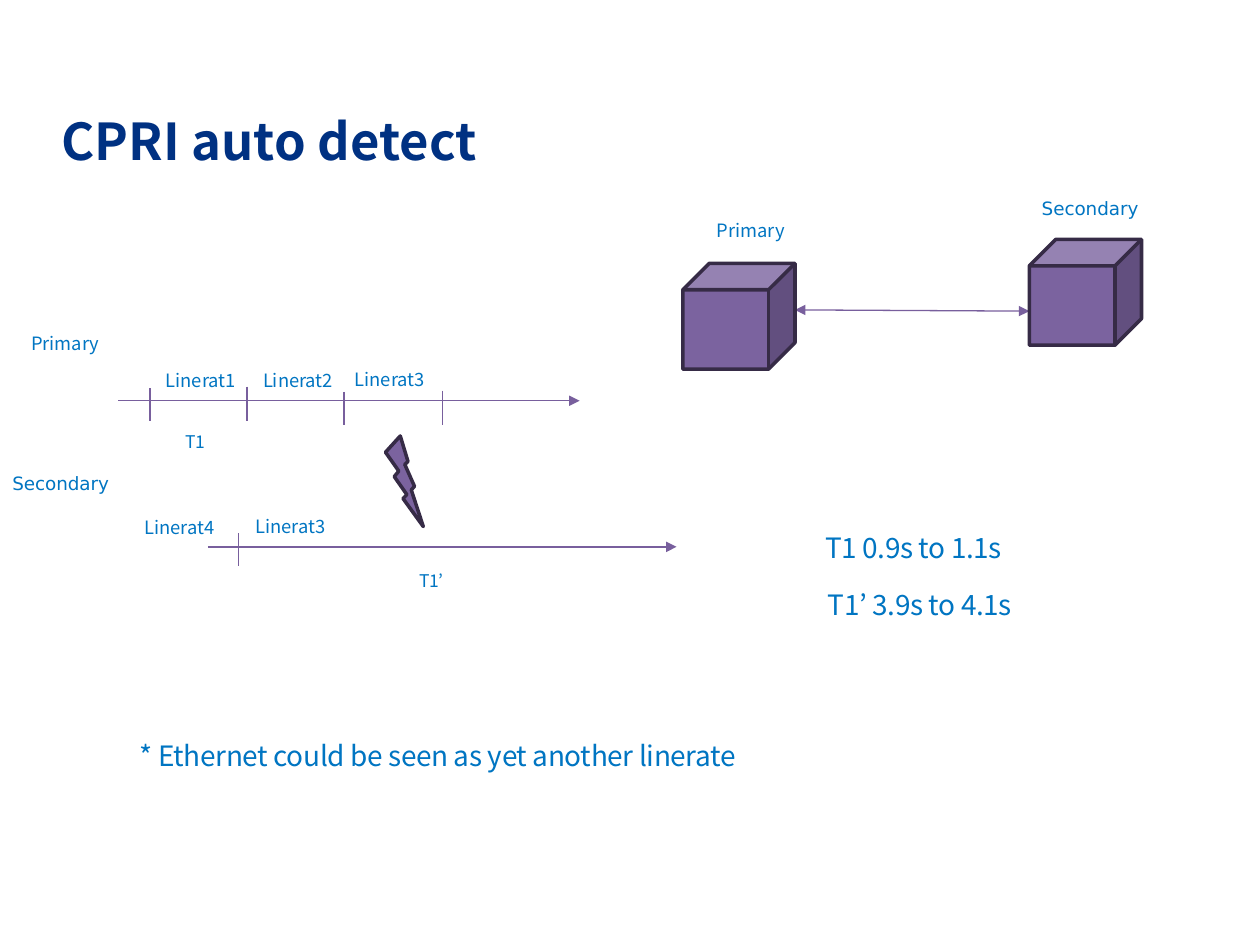
from dataclasses import dataclass
from typing import NamedTuple

from lxml import etree
from pptx import Presentation
from pptx.dml.color import RGBColor
from pptx.enum import shapes, text
from pptx.oxml.ns import qn
from pptx.util import Pt


@dataclass(frozen=True)
class Theme:
    title: str = "003182"
    body: str = "0075C2"
    line: str = "785F9D"
    fill: str = "7B639F"
    outline: str = "362B46"
    font: str = "Noto Sans CJK JP"
    alt_font: str = "DejaVu Sans"
    title_size: float = 29
    label_size: float = 10.5
    time_size: float = 10
    note_size: float = 16


class Label(NamedTuple):
    text: str
    x: float
    y: float
    w: float = 64.8
    font: str = Theme.font


class Note(NamedTuple):
    text: str
    x: float
    y: float
    w: float
    h: float
    size: float


class Line(NamedTuple):
    x1: float
    y1: float
    x2: float
    y2: float
    ends: tuple[str, ...] = ()


class Icon(NamedTuple):
    kind: shapes.MSO_SHAPE
    x: float
    y: float
    w: float
    h: float


THEME = Theme()
LABEL_H = 20.9
TICK_H = 18.7
CUBE_W, CUBE_H = 64.1, 60.5

LABELS = [
    Label("Primary", 402.5, 121.7),
    Label("Secondary", 588.2, 109.4, 90, THEME.alt_font),
    Label("Primary", 10.8, 186.5),
    Label("Linerat1", 87.8, 207.4),
    Label("Linerat2", 143.3, 207.4),
    Label("Linerat3", 195.8, 206.6),
    Label("Secondary", 0, 266.4, 88.6, THEME.alt_font),
    Label("Linerat4", 75.6, 291.6),
    Label("Linerat3", 139, 290.9),
]
NOTES = [
    Note("T1", 101.5, 244.1, 34.6, 31, THEME.time_size),
    Note("T1’", 235.4, 323.3, 34.6, 31, THEME.time_size),
    Note("T1 0.9s to 1.1s", 467.3, 301, 146.9, 31, THEME.note_size),
    Note("T1’ 3.9s to 4.1s", 468.7, 333.4, 163.4, 31, THEME.note_size),
    Note("* Ethernet could be seen as yet another linerate",
         75.6, 419.8, 411.1, 60.5, THEME.note_size),
]
ARROWS = [
    Line(67.7, 229, 331.2, 229, ("tailEnd",)),
    Line(118.8, 312.5, 386.6, 312.5, ("tailEnd",)),
    Line(454.3, 177.1, 588.2, 177.8, ("headEnd", "tailEnd")),
]
TICKS = [(85.7, 221.8), (141.1, 221), (141.1, 221.8), (196.6, 223.9),
         (252.7, 223.2), (252.7, 223.9), (136.1, 304.6)]
ICONS = [
    Icon(shapes.MSO_SHAPE.CUBE, 390.2, 150.5, CUBE_W, CUBE_H),
    Icon(shapes.MSO_SHAPE.CUBE, 588.2, 136.8, CUBE_W, CUBE_H),
    Icon(shapes.MSO_SHAPE.LIGHTNING_BOLT, 220.3, 249.1, 21.6, 51.8),
]


def add_text(s, content: str, x: float, y: float, w: float, h: float, *,
             size: float, font: str = THEME.font, color: str = THEME.body,
             bold: bool = False, middle: bool = False,
             inset: tuple[float, float] = (7.2, 3.6),
             before: float = 0, spacing: float = 0) -> None:
    """Add a one-paragraph text box; inset is (horizontal, vertical)."""
    tf = s.shapes.add_textbox(Pt(x), Pt(y), Pt(w), Pt(h)).text_frame
    tf.word_wrap = True
    tf.margin_left = tf.margin_right = Pt(inset[0])
    tf.margin_top = tf.margin_bottom = Pt(inset[1])
    tf.vertical_anchor = text.MSO_ANCHOR.MIDDLE if middle else text.MSO_ANCHOR.TOP
    p = tf.paragraphs[0]
    p.space_before = Pt(before)
    r = p.add_run()
    r.text = content
    r.font.size = Pt(size)
    r.font.name = font
    r.font.bold = bold
    r.font.color.rgb = RGBColor.from_string(color)
    rpr = r.font._element
    etree.SubElement(rpr, qn("a:ea")).set("typeface", font)
    if spacing:
        rpr.set("spc", str(round(spacing * 100)))


def add_line(s, line: Line) -> None:
    c = s.shapes.add_connector(shapes.MSO_CONNECTOR.STRAIGHT, Pt(line.x1),
                               Pt(line.y1), Pt(line.x2), Pt(line.y2))
    c.line.color.rgb = RGBColor.from_string(THEME.line)
    c.line.width = Pt(0.75)
    for end in line.ends:
        etree.SubElement(c.line._get_or_add_ln(), qn(f"a:{end}")).set("type", "triangle")
    etree.SubElement(c._element.spPr, qn("a:effectLst"))


def add_icon(s, icon: Icon) -> None:
    sp = s.shapes.add_shape(icon.kind, Pt(icon.x), Pt(icon.y), Pt(icon.w), Pt(icon.h))
    sp.shadow.inherit = False
    sp.fill.solid()
    sp.fill.fore_color.rgb = RGBColor.from_string(THEME.fill)
    sp.line.color.rgb = RGBColor.from_string(THEME.outline)
    sp.line.width = Pt(2)


def main() -> None:
    prs = Presentation()
    prs.slide_width, prs.slide_height = Pt(720), Pt(540)
    s = prs.slides.add_slide(prs.slide_layouts[6])

    add_text(s, "CPRI auto detect", 28.1, 37.4, 621.4, 85, size=THEME.title_size,
             color=THEME.title, bold=True, middle=True)
    for arrow in ARROWS:
        add_line(s, arrow)
    for x, y in TICKS:
        add_line(s, Line(x, y, x, y + TICK_H))
    for icon in ICONS:
        add_icon(s, icon)
    for label in LABELS:
        add_text(s, label.text, label.x, label.y, label.w, LABEL_H,
                 size=THEME.label_size, font=label.font)
    for note in NOTES:
        add_text(s, note.text, note.x, note.y, note.w, note.h, size=note.size,
                 inset=(4.3, 2.2), before=6, spacing=-0.2)

    prs.save("out.pptx")


if __name__ == "__main__":
    main()
